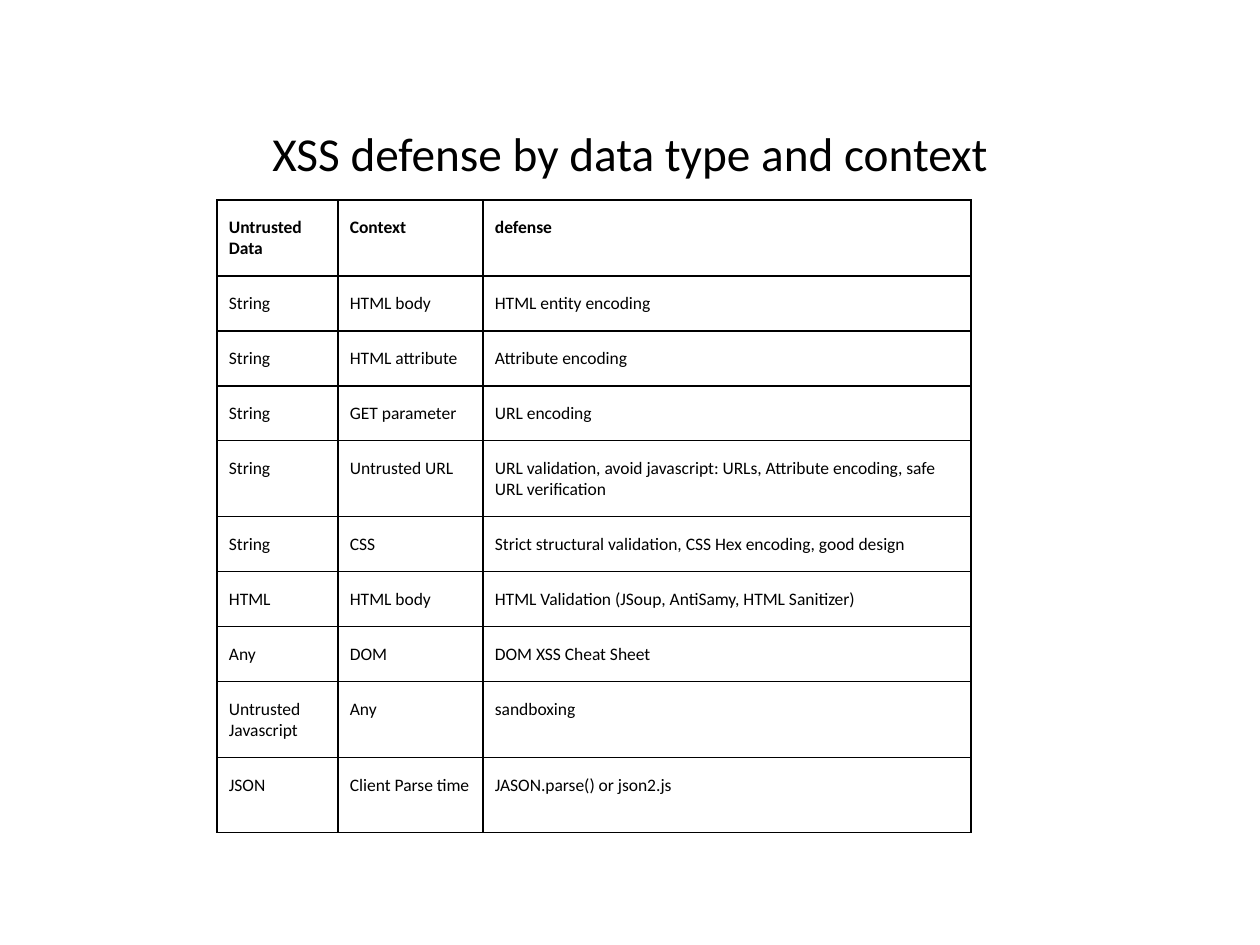
from lxml import etree
from pptx import Presentation
from pptx.dml.color import RGBColor
from pptx.enum.text import MSO_ANCHOR, MSO_AUTO_SIZE, PP_ALIGN
from pptx.oxml.ns import qn
from pptx.util import Emu, Pt

BOTTOM = MSO_ANCHOR.BOTTOM
TOP = MSO_ANCHOR.TOP
CENTER = PP_ALIGN.CENTER
FIXED = MSO_AUTO_SIZE.NONE
BLACK = RGBColor(0, 0, 0)
FONT = "Calibri"
SCALE = 914400 / 126
EDGE = Pt(0.75)
COLS = [121, 145, 488]
ROWS = [76, 55, 55, 55, 76, 55, 55, 55, 76, 75]
DATA = [
    ("Untrusted Data", "Context", "defense"),
    ("String", "HTML body", "HTML entity encoding"),
    ("String", "HTML attribute", "Attribute encoding"),
    ("String", "GET parameter", "URL encoding"),
    ("String", "Untrusted URL",
     "URL validation, avoid javascript: URLs, Attribute encoding, safe URL verification"),
    ("String", "CSS", "Strict structural validation, CSS Hex encoding, good design"),
    ("HTML", "HTML body", "HTML Validation (JSoup, AntiSamy, HTML Sanitizer)"),
    ("Any", "DOM", "DOM XSS Cheat Sheet"),
    ("Untrusted Javascript", "Any", "sandboxing"),
    ("JSON", "Client Parse time", "JASON.parse() or json2.js"),
]


def px(n):
    return Emu(round(n * SCALE))


def style(para, size, bold=False):
    for run in para.runs:
        font = run.font
        font.name = FONT
        font.size = Pt(size)
        font.bold = bold
        font.color.rgb = BLACK


def add_title(slide, text):
    title = slide.shapes.title
    title.left, title.top, title.width, title.height = map(px, (63, 38, 1134, 157))
    frame = title.text_frame
    frame.text = text
    frame.word_wrap = True
    frame.auto_size = FIXED
    frame.vertical_anchor = BOTTOM
    frame.margin_left = frame.margin_right = px(14)
    frame.margin_top = frame.margin_bottom = px(14)
    para = frame.paragraphs[0]
    para.alignment = CENTER
    style(para, 27)


def add_edges(cell):
    props = cell._tc.get_or_add_tcPr()
    for side in ("a:lnL", "a:lnR", "a:lnT", "a:lnB"):
        line = etree.SubElement(props, qn(side), w=str(EDGE))
        fill = etree.SubElement(line, qn("a:solidFill"))
        etree.SubElement(fill, qn("a:srgbClr"), val=str(BLACK))


def fill_cell(cell, text, bold):
    cell.text = text
    cell.vertical_anchor = TOP
    cell.margin_left = cell.margin_right = px(12)
    cell.margin_top = px(17)
    cell.margin_bottom = px(16)
    add_edges(cell)
    cell.fill.background()
    style(cell.text_frame.paragraphs[0], 10, bold)


def add_grid(slide):
    frame = slide.shapes.add_table(
        len(ROWS), len(COLS), px(217), px(200), px(sum(COLS)), px(sum(ROWS)))
    table = frame.table
    table.first_row = False
    table.horz_banding = False
    for col, width in zip(table.columns, COLS):
        col.width = px(width)
    for r, (row, height) in enumerate(zip(table.rows, ROWS)):
        row.height = px(height)
        for cell, text in zip(row.cells, DATA[r]):
            fill_cell(cell, text, r == 0)


def main():
    deck = Presentation()
    deck.slide_width = px(1260)
    deck.slide_height = px(945)
    slide = deck.slides.add_slide(deck.slide_layouts[5])
    add_title(slide, "XSS defense by data type and context")
    add_grid(slide)
    deck.save("out.pptx")


if __name__ == "__main__":
    main()
